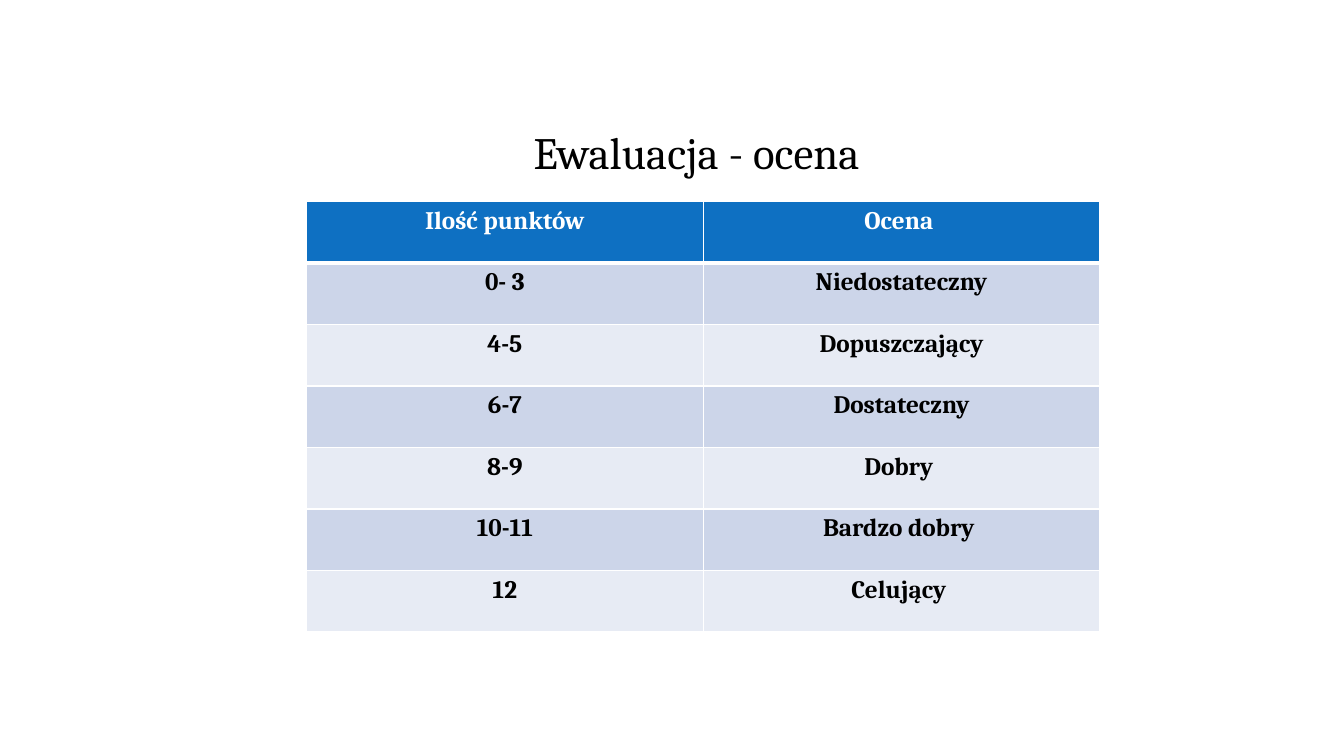
from lxml import etree
from pptx import Presentation
from pptx.dml.color import RGBColor
from pptx.enum import text
from pptx.oxml import ns
from pptx.util import Inches, Pt

FONT = "Cambria"
BLACK = RGBColor(0x00, 0x00, 0x00)
WHITE = RGBColor(0xFF, 0xFF, 0xFF)
BLUE = RGBColor(0x0E, 0x70, 0xC2)
DARK = RGBColor(0xCC, 0xD5, 0xE9)
LIGHT = RGBColor(0xE7, 0xEB, 0xF4)

GRADES = [
    ("Ilość punktów", "Ocena "),
    ("0- 3", "Niedostateczny"),
    ("4-5", "Dopuszczający"),
    ("6-7", "Dostateczny"),
    ("8-9", "Dobry "),
    ("10-11", "Bardzo dobry "),
    ("12", "Celujący "),
]


def style(par, size, color, bold=False):
    par.alignment = text.PP_ALIGN.CENTER
    for run in par.runs:
        run.font.name = FONT
        run.font.size = Pt(size)
        run.font.bold = bold
        run.font.color.rgb = color


def border(cell, sides):
    props = cell._tc.get_or_add_tcPr()
    for spot, (side, width) in enumerate(sides.items()):
        line = etree.Element(ns.qn("a:ln" + side), w=str(Pt(width)))
        fill = etree.SubElement(line, ns.qn("a:solidFill"))
        etree.SubElement(fill, ns.qn("a:srgbClr"), val=str(WHITE))
        props.insert(spot, line)


deck = Presentation()
deck.slide_width = Inches(13.33)
deck.slide_height = Inches(7.5)
slide = deck.slides.add_slide(deck.slide_layouts[6])

# Title
title = slide.shapes.add_textbox(Inches(1.66), Inches(0.58), Inches(10.5), Inches(1.25))
frame = title.text_frame
frame.word_wrap = True
frame.vertical_anchor = text.MSO_ANCHOR.BOTTOM
frame.text = "Ewaluacja - ocena"
frame.paragraphs[0].line_spacing = 0.9
style(frame.paragraphs[0], 32, BLACK)

# Grade table
table = slide.shapes.add_table(
    len(GRADES), 2, Inches(3.04), Inches(2), Inches(7.87), Inches(4.27)
).table

for r, grade in enumerate(GRADES):
    for c, label in enumerate(grade):
        cell = table.cell(r, c)
        cell.text = label
        head = r == 0
        style(cell.text_frame.paragraphs[0], 18, WHITE if head else BLACK, True)
        cell.fill.solid()
        cell.fill.fore_color.rgb = BLUE if head else DARK if r % 2 else LIGHT
        # The rule under the header is thicker
        border(cell, {"L": 1, "R": 1, "T": 3 if r == 1 else 1, "B": 3 if head else 1})

deck.save("out.pptx")
